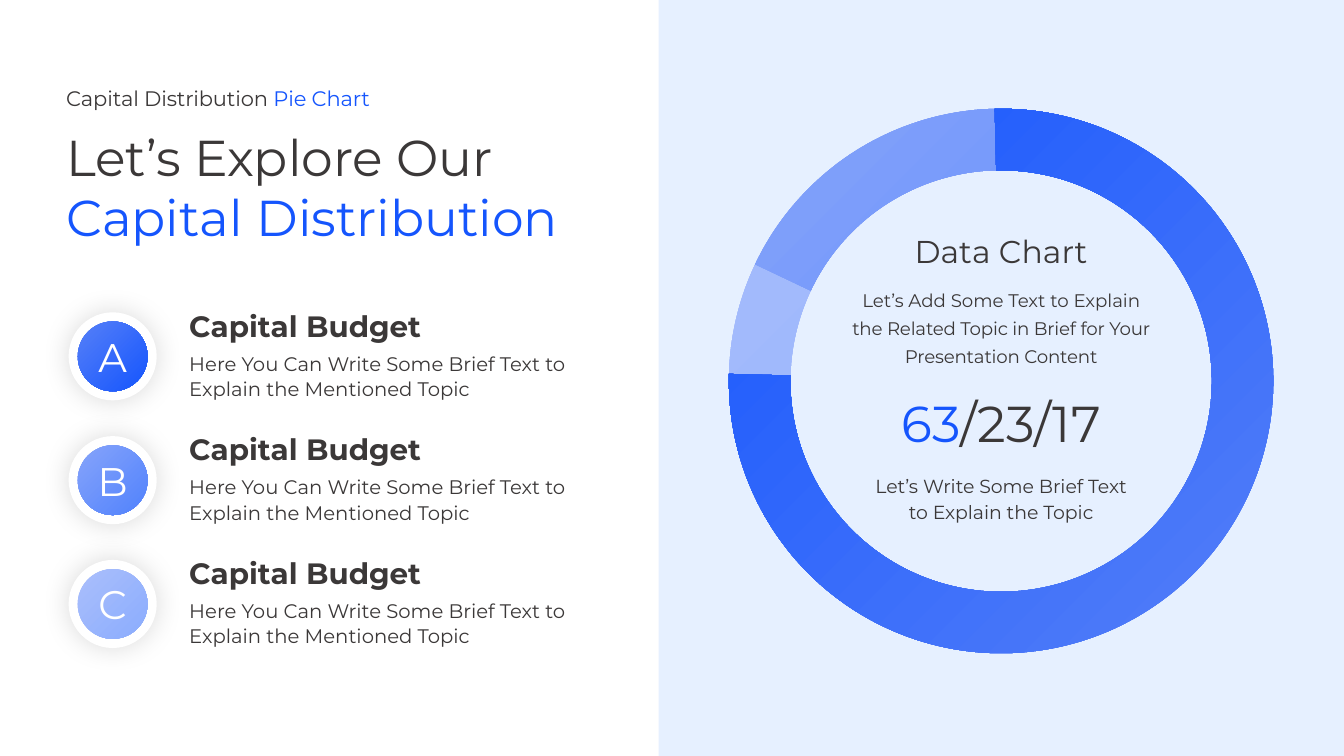
from pptx import Presentation
from pptx.dml.color import RGBColor
from pptx.enum.shapes import MSO_SHAPE
from pptx.enum.text import MSO_ANCHOR, MSO_AUTO_SIZE, PP_ALIGN
from pptx.oxml import parse_xml
from pptx.oxml.ns import nsdecls, qn
from pptx.util import Cm, Pt

FONT = "Montserrat"
COLORS = {
    "white": "FFFFFF", "panel": "E6F0FF", "text": "3B3838", "accent": "1555FD",
}
GRADIENTS = {
    "strong": ("1555FD", "5680F8"),
    "medium": ("5182FD", "86A4FA"),
    "light": ("8BACFD", "AABFFC"),
}
SLIDE_W, SLIDE_H = 33.87, 19.05


def rgb(name):
    return RGBColor.from_string(COLORS[name])


def add_shape(s, kind, x, y, w, h, color=None):
    sp = s.shapes.add_shape(kind, Cm(x), Cm(y), Cm(w), Cm(h))
    sp.shadow.inherit = False
    sp.line.fill.background()
    if color:
        sp.fill.solid()
        sp.fill.fore_color.rgb = rgb(color)
    return sp


def radial_fill(sp, tone, focus="bottom right"):
    """Circular gradient that starts from one corner of the shape."""
    sp.fill.gradient()
    for stop, color in zip(sp.fill.gradient_stops, GRADIENTS[tone]):
        stop.color.rgb = RGBColor.from_string(color)
    sides = 'l="100000" t="100000"' if focus == "bottom right" else 'r="100000" b="100000"'
    grad = sp._element.spPr.find(qn("a:gradFill"))
    grad.replace(grad.find(qn("a:lin")), parse_xml(
        f'<a:path {nsdecls("a")} path="circle"><a:fillToRect {sides}/></a:path>'))


def soft_shadow(sp):
    effects = sp._element.spPr.find(qn("a:effectLst"))
    effects.append(parse_xml(
        f'<a:outerShdw {nsdecls("a")} blurRad="254000" algn="ctr" rotWithShape="0">'
        '<a:srgbClr val="000000"><a:alpha val="15000"/></a:srgbClr></a:outerShdw>'))


def set_font(p, size, color="text", bold=False):
    p.font.name = FONT
    p.font.size = Pt(size)
    p.font.bold = bold
    p.font.color.rgb = rgb(color)


def add_text(s, x, y, w, h, lines, size, bold=False, align=PP_ALIGN.LEFT,
             spacing=None, tight_lines=()):
    """Each line is a list of (text, color) runs or a plain string."""
    tf = s.shapes.add_textbox(Cm(x), Cm(y), Cm(w), Cm(h)).text_frame
    tf.word_wrap = False
    tf.auto_size = MSO_AUTO_SIZE.SHAPE_TO_FIT_TEXT
    for i, line in enumerate(lines):
        p = tf.paragraphs[0] if i == 0 else tf.add_paragraph()
        p.alignment = align
        if spacing:
            p.line_spacing = Pt(spacing)
        set_font(p, size, bold=bold)
        for text, color in [(line, "text")] if isinstance(line, str) else line:
            r = p.add_run()
            r.text = text
            if color != "text":
                r.font.color.rgb = rgb(color)
            if i in tight_lines:
                r._r.get_or_add_rPr().set("spc", "-10")


def add_heading(s, x, y):
    add_text(s, x, y, 9, 0.89,
             [[("Capital Distribution ", "text"), ("Pie Chart", "accent")]], 15,
             tight_lines=(0,))
    add_text(s, x, y + 1.02, 13.92, 3.33,
             ["Let’s Explore Our", [("Capital Distribution", "accent")]], 36)


def add_item(s, x, y, letter, tone):
    # Badge: white rim with a gradient disc
    rim, disc = 2.22, 1.76
    inset = (rim - disc) / 2
    badge_y = y + 0.24
    soft_shadow(add_shape(s, MSO_SHAPE.OVAL, x, badge_y, rim, rim, "white"))
    sp = add_shape(s, MSO_SHAPE.OVAL, x + inset, badge_y + inset, disc, disc)
    radial_fill(sp, tone)
    tf = sp.text_frame
    tf.margin_left = tf.margin_right = tf.margin_top = tf.margin_bottom = 0
    tf.word_wrap = False
    tf.vertical_anchor = MSO_ANCHOR.MIDDLE
    p = tf.paragraphs[0]
    p.text = letter
    p.alignment = PP_ALIGN.CENTER
    set_font(p, 28.5, "white")

    # Title and description
    add_text(s, x + 2.79, y, 6.43, 1.14, ["Capital Budget"], 21, bold=True)
    add_text(s, x + 2.79, y + 1.06, 10.26, 1.5,
             ["Here You Can Write Some Brief Text to", "Explain the Mentioned Topic"],
             14, spacing=18)


def add_ring(s, x, y, size):
    # Segments: tone, rotation, start angle, gradient focus
    for tone, rotation, start, focus in [
        ("light", 296.9, 146.03, "bottom right"),
        ("medium", 0, 123.22, "bottom right"),
        ("strong", 272.7, 213.57, "top left"),
    ]:
        sp = add_shape(s, MSO_SHAPE.BLOCK_ARC, x, y, size, size)
        sp.rotation = rotation
        for i, value in enumerate((start, 161.28, 0.113)):
            sp.adjustments[i] = value
        radial_fill(sp, tone, focus)

    # Centred texts: offset from top, width, height, lines, size, spacing, tight lines
    for top, w, h, lines, pt, spacing, tight in [
        (2.97, 5.13, 1.22, ["Data Chart"], 22.5, None, ()),
        (4.27, 8.26, 2.34, ["Let’s Add Some Text to Explain",
                            "the Related Topic in Brief for Your",
                            "Presentation Content"], 13, 20, (1, 2)),
        (7.01, 6.07, 1.8, [[("63", "accent"), ("/23/17", "text")]], 36, None, ()),
        (8.99, 7.34, 1.57, ["Let’s Write Some Brief Text",
                            "to Explain the Topic"], 13.5, 19, ()),
    ]:
        add_text(s, x + (size - w) / 2, y + top, w, h, lines, pt,
                 align=PP_ALIGN.CENTER, spacing=spacing, tight_lines=tight)


def main():
    prs = Presentation()
    prs.slide_width, prs.slide_height = Cm(SLIDE_W), Cm(SLIDE_H)
    s = prs.slides.add_slide(prs.slide_layouts[6])

    # Right panel
    panel_x = 16.6
    add_shape(s, MSO_SHAPE.RECTANGLE, panel_x, 0, SLIDE_W - panel_x, SLIDE_H, "panel")
    add_ring(s, 18.37, 2.74, 13.72)

    # Left column
    add_heading(s, 1.42, 2.03)
    for i, (letter, tone) in enumerate(zip("ABC", GRADIENTS)):
        add_item(s, 1.73, 7.63 + i * 3.12, letter, tone)

    prs.save("out.pptx")


if __name__ == "__main__":
    main()
